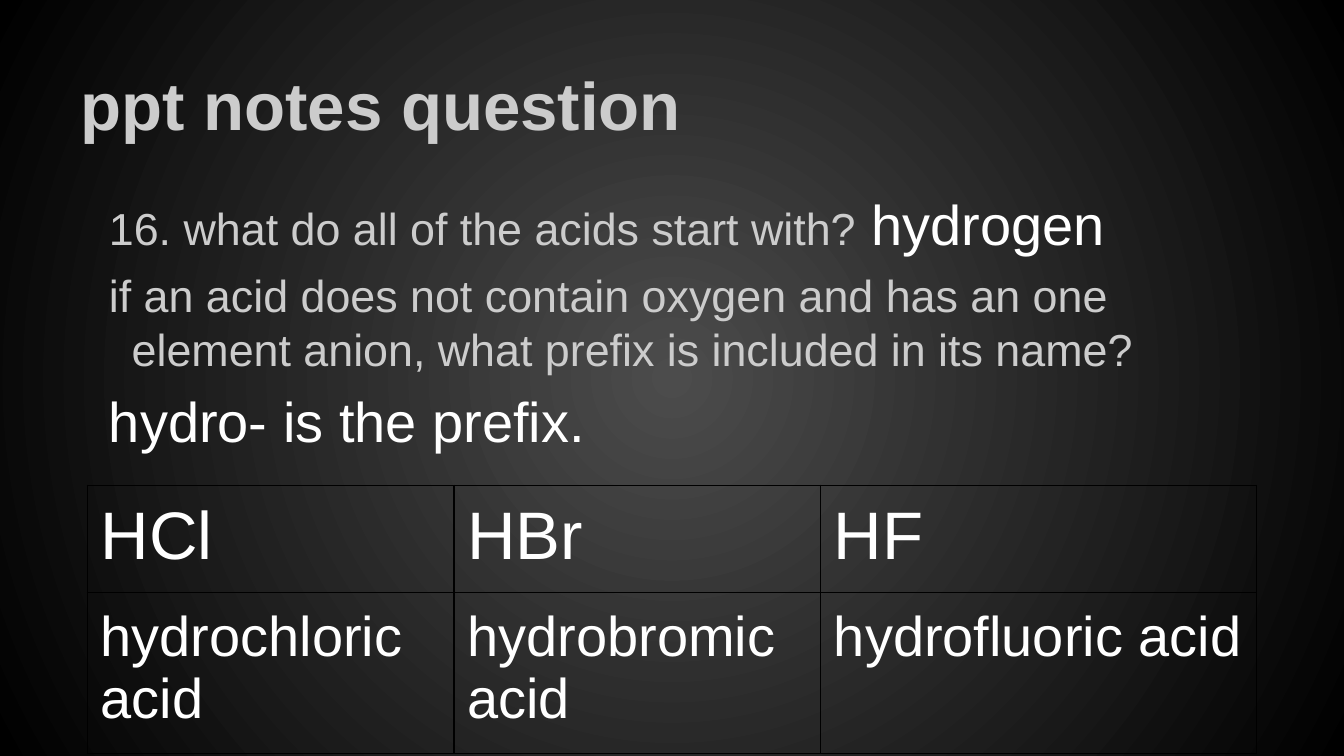
from pptx import Presentation
from pptx import util as u
from pptx.dml.color import RGBColor
from pptx.enum import text
from pptx.oxml import parse_xml
from pptx.oxml.ns import nsdecls

TITLE = "ppt notes question"
NOTES = [
    [("16. what do all of the acids start with?", "question"), (" hydrogen", "answer")],
    [("if an acid does not contain oxygen and has an one element anion, "
      "what prefix is included in its name?", "question")],
    [("hydro- is the prefix.", "answer")],
]
ACIDS = [
    ("formula", ["HCl", "HBr", "HF"]),
    ("answer", ["hydrochloric acid", "hydrobromic acid", "hydrofluoric acid"]),
]
COL_WIDTHS = [6.93, 6.93, 8.23]
ROW_HEIGHTS = [1.96, 2.92]

THEME = {
    "font": "Arial",
    "glow": "4C4C4C",
    "edge": "000000",
    "border": "000000",
    "title": (36, "CCCCCC", True),
    "question": (24, "CCCCCC", False),
    "answer": (30, "FFFFFF", False),
    "formula": (36, "FFFFFF", False),
}
INSET = u.Cm(0.25)


def add_run(p, words, style):
    size, color, bold = THEME[style]
    r = p.add_run()
    r.text = words
    r.font.name = THEME["font"]
    r.font.size = u.Pt(size)
    r.font.bold = bold
    r.font.color.rgb = RGBColor.from_string(color)


def set_insets(frame):
    frame.margin_left = frame.margin_right = INSET
    frame.margin_top = frame.margin_bottom = INSET


def add_text_box(s, box, anchor):
    tf = s.shapes.add_textbox(*map(u.Cm, box)).text_frame
    tf.word_wrap = True
    tf.vertical_anchor = anchor
    set_insets(tf)
    return tf


def set_background(s):
    s.background.fill.solid()
    bg_pr = s._element.cSld.bg.bgPr
    bg_pr.replace(bg_pr[0], parse_xml(
        f'<a:gradFill {nsdecls("a")} rotWithShape="1"><a:gsLst>'
        f'<a:gs pos="0"><a:srgbClr val="{THEME["glow"]}"/></a:gs>'
        f'<a:gs pos="100000"><a:srgbClr val="{THEME["edge"]}"/></a:gs></a:gsLst>'
        '<a:path path="circle"><a:fillToRect l="50000" t="50000" r="50000" b="50000"/>'
        '</a:path></a:gradFill>'))


def set_borders(cell):
    tc_pr = cell._tc.get_or_add_tcPr()
    for i, side in enumerate("LRTB"):
        tc_pr.insert(i, parse_xml(
            f'<a:ln{side} {nsdecls("a")} w="{u.Pt(0.75)}"><a:solidFill>'
            f'<a:srgbClr val="{THEME["border"]}"/></a:solidFill></a:ln{side}>'))


def add_notes(s):
    tf = add_text_box(s, (1.27, 3.33, 22.86, 10.34), text.MSO_ANCHOR.TOP)
    for i, runs in enumerate(NOTES):
        p = tf.add_paragraph() if i else tf.paragraphs[0]
        p.space_before = u.Pt(6)
        p_pr = p._p.get_or_add_pPr()
        p_pr.set("marL", str(u.Cm(0.97)))
        p_pr.set("indent", str(u.Cm(-0.43)))
        for words, style in runs:
            add_run(p, words, style)


def add_acid_table(s):
    box = (1.65, 9.17, sum(COL_WIDTHS), sum(ROW_HEIGHTS))
    table = s.shapes.add_table(len(ACIDS), len(COL_WIDTHS), *map(u.Cm, box)).table
    table.first_row = table.horz_banding = False
    for col, width in zip(table.columns, COL_WIDTHS):
        col.width = u.Cm(width)
    for row, height, (style, names) in zip(table.rows, ROW_HEIGHTS, ACIDS):
        row.height = u.Cm(height)
        for cell, name in zip(row.cells, names):
            cell.fill.background()
            set_insets(cell)
            set_borders(cell)
            add_run(cell.text_frame.paragraphs[0], name, style)


def main():
    prs = Presentation()
    prs.slide_width, prs.slide_height = u.Cm(25.4), u.Cm(14.29)
    s = prs.slides.add_slide(prs.slide_layouts[6])
    set_background(s)
    title = add_text_box(s, (1.27, 0.58, 22.86, 2.39), text.MSO_ANCHOR.BOTTOM)
    add_run(title.paragraphs[0], TITLE, "title")
    add_notes(s)
    add_acid_table(s)
    prs.save("out.pptx")


if __name__ == "__main__":
    main()
